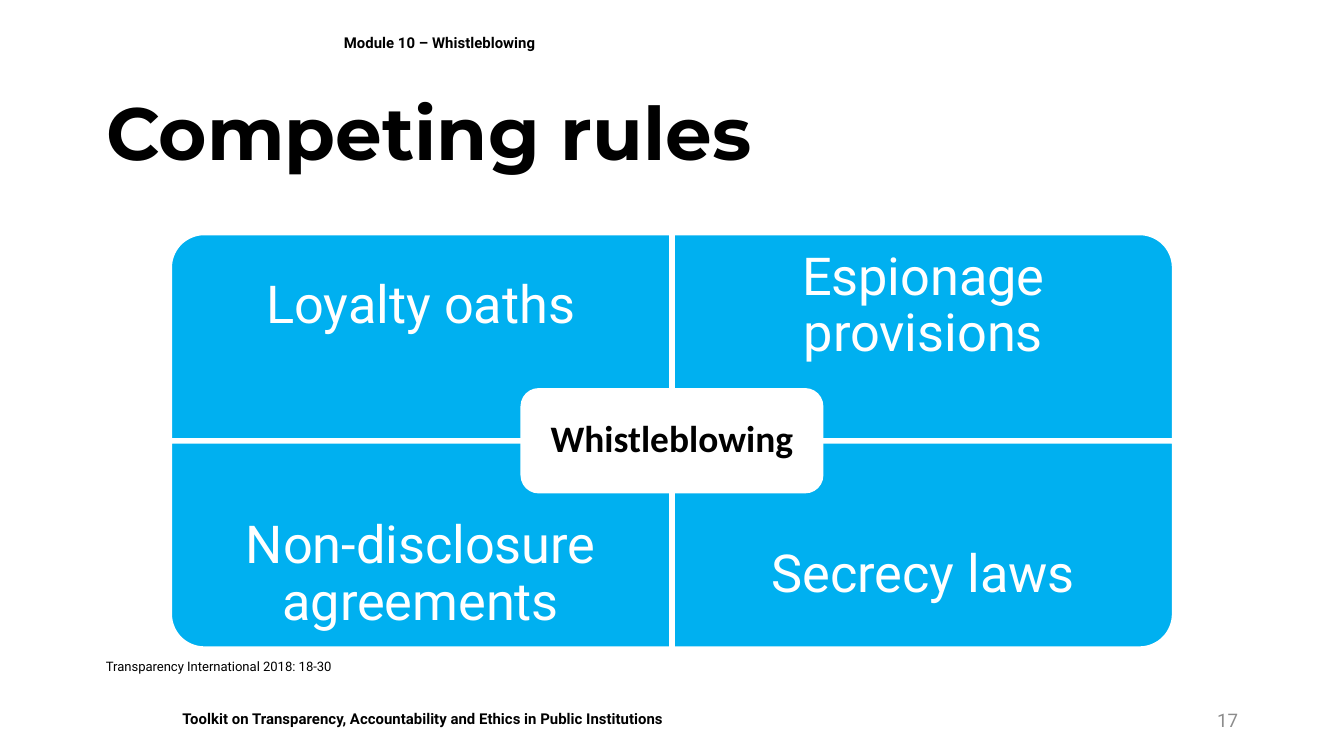
from dataclasses import dataclass
from math import cos, pi, sin

from pptx import Presentation
from pptx.dml.color import RGBColor
from pptx.enum.shapes import MSO_SHAPE as Preset
from pptx.enum.text import MSO_ANCHOR as Anchor, PP_ALIGN as Align
from pptx.util import Inches, Pt

COLORS = {"black": "000000", "white": "FFFFFF", "blue": "00B0F0", "gray": "8C8C8C"}
SLIDE_WIDTH = 10
SLIDE_HEIGHT = SLIDE_WIDTH * 9 / 16
CENTER_X, CENTER_Y = SLIDE_WIDTH / 2, 3.28
TILE_WIDTH, TILE_HEIGHT = 3.74, 1.55
CORNER_RADIUS = 0.26
ARC_STEPS = 24
TITLE_LEFT, TITLE_WIDTH = 0.69, 8.62


@dataclass(frozen=True)
class Style:
    size: float
    color: str = "black"
    bold: bool = False
    font: str = "Roboto"
    align: Align = Align.LEFT
    spacing: float = 1.0


@dataclass(frozen=True)
class Tile:
    column: int
    row: int
    text: str


@dataclass(frozen=True)
class Label:
    text: str
    box: tuple[float, float, float, float]
    style: Style
    anchor: Anchor = Anchor.MIDDLE


HEADER = Style(8, bold=True)
TILE_STYLE = Style(28, "white", align=Align.CENTER, spacing=0.9)
HUB_STYLE = Style(20, bold=True, font="Calibri", align=Align.CENTER, spacing=0.9)
TITLE_STYLE = Style(39.6, bold=True, font="Montserrat", spacing=0.9)

TILES = [
    Tile(0, 0, "Loyalty oaths"),
    Tile(1, 0, "Espionage provisions"),
    Tile(0, 1, "Non-disclosure agreements"),
    Tile(1, 1, "Secrecy laws"),
]
FOOTER = Label("Toolkit on Transparency, Accountability and Ethics in Public Institutions",
               (1.26, 5.23, 7.17, 0.24), HEADER, Anchor.TOP)
LABELS = [
    Label("Module 10 – Whistleblowing", (2.46, 0.1, 6.85, 0.44), HEADER),
    Label("17", (7.06, 5.21, 2.25, 0.3), Style(10, "gray", align=Align.RIGHT)),
    Label("Transparency International 2018: 18-30",
          (TITLE_LEFT, 4.85, 2.13, 0.22), Style(7), Anchor.TOP),
]


def color(name: str) -> RGBColor:
    return RGBColor.from_string(COLORS[name])


def write(shape, text: str, style: Style, anchor: Anchor) -> None:
    frame = shape.text_frame
    frame.word_wrap = True
    frame.vertical_anchor = anchor
    paragraph = frame.paragraphs[0]
    paragraph.text = text
    paragraph.alignment = style.align
    paragraph.line_spacing = style.spacing
    font = paragraph.font
    font.name, font.size, font.bold = style.font, Pt(style.size), style.bold
    font.color.rgb = color(style.color)


def set_insets(shape, side: float, top: float, bottom: float) -> None:
    frame = shape.text_frame
    frame.margin_left = frame.margin_right = Inches(side)
    frame.margin_top, frame.margin_bottom = Inches(top), Inches(bottom)


def paint(shape, fill: str, line_width: float) -> None:
    shape.shadow.inherit = False
    shape.fill.solid()
    shape.fill.fore_color.rgb = color(fill)
    shape.line.color.rgb = color("white")
    shape.line.width = Pt(line_width)


def add_tile(slide, tile: Tile) -> None:
    """Draw a quadrant whose outer corner is rounded."""
    across, down = 2 * tile.column - 1, 2 * tile.row - 1
    angles = [step * pi / 2 / ARC_STEPS for step in range(ARC_STEPS + 1)]
    inner_x, inner_y = TILE_WIDTH - CORNER_RADIUS, TILE_HEIGHT - CORNER_RADIUS
    offsets = [(TILE_WIDTH, 0)]
    offsets += [(inner_x + CORNER_RADIUS * cos(angle), inner_y + CORNER_RADIUS * sin(angle))
                for angle in angles]
    offsets.append((0, TILE_HEIGHT))
    points = [(Inches(CENTER_X + across * x), Inches(CENTER_Y + down * y)) for x, y in offsets]
    builder = slide.shapes.build_freeform(Inches(CENTER_X), Inches(CENTER_Y))
    builder.add_line_segments(points, close=True)
    shape = builder.convert_to_shape()
    paint(shape, "blue", 3)
    top, bottom = (0.65, 0.2) if tile.row else (0.2, 0.65)
    set_insets(shape, 0.2, top, bottom)
    write(shape, tile.text, TILE_STYLE, Anchor.MIDDLE)


def add_hub(slide, text: str, width: float, height: float) -> None:
    shape = slide.shapes.add_shape(
        Preset.ROUNDED_RECTANGLE, Inches(CENTER_X - width / 2), Inches(CENTER_Y - height / 2),
        Inches(width), Inches(height))
    paint(shape, "white", 1)
    set_insets(shape, 0.15, 0.15, 0.15)
    write(shape, text, HUB_STYLE, Anchor.MIDDLE)


def add_footer(slide, label: Label) -> None:
    shape = slide.shapes.add_shape(Preset.RECTANGLE, *map(Inches, label.box))
    shape.shadow.inherit = False
    shape.fill.solid()
    shape.fill.fore_color.rgb = color("white")
    shape.line.fill.background()
    write(shape, label.text, label.style, label.anchor)


def add_label(slide, label: Label) -> None:
    shape = slide.shapes.add_textbox(*map(Inches, label.box))
    write(shape, label.text, label.style, label.anchor)


def main() -> None:
    presentation = Presentation()
    presentation.slide_width = Inches(SLIDE_WIDTH)
    presentation.slide_height = Inches(SLIDE_HEIGHT)
    slide = presentation.slides.add_slide(presentation.slide_layouts[5])

    title = slide.shapes.title
    title.left, title.top = Inches(TITLE_LEFT), Inches(0.64)
    title.width, title.height = Inches(TITLE_WIDTH), Inches(0.75)
    write(title, "Competing rules", TITLE_STYLE, Anchor.MIDDLE)

    add_footer(slide, FOOTER)
    for tile in TILES:
        add_tile(slide, tile)
    add_hub(slide, "Whistleblowing", 2.24, 0.77)
    for label in LABELS:
        add_label(slide, label)
    presentation.save("out.pptx")


if __name__ == "__main__":
    main()
